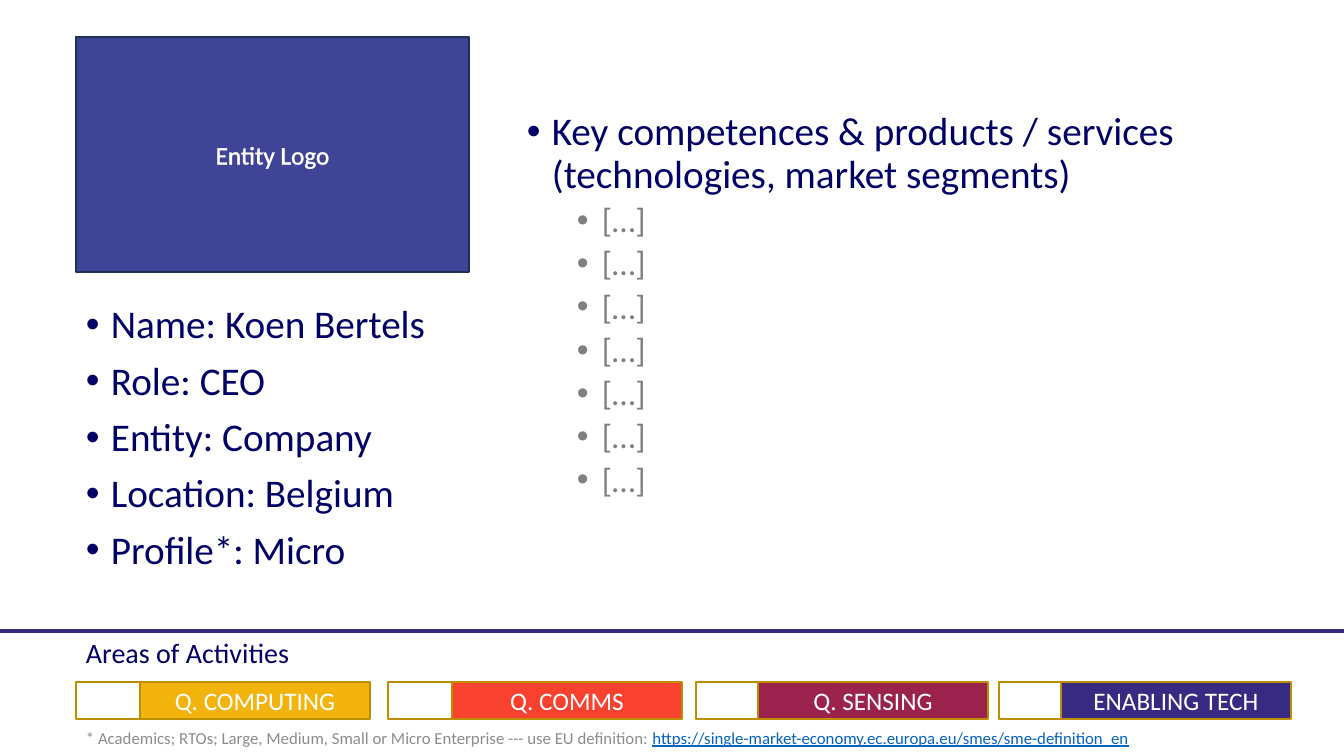
from lxml.etree import SubElement
from pptx import Presentation
from pptx.dml.color import RGBColor
from pptx.enum.shapes import MSO_CONNECTOR, MSO_SHAPE
from pptx.enum.text import MSO_ANCHOR, MSO_AUTO_SIZE, PP_ALIGN
from pptx.oxml.ns import qn
from pptx.util import Pt

NAVY = RGBColor(0x00, 0x00, 0x66)
GREY = RGBColor(0x80, 0x80, 0x80)
NOTE_GREY = RGBColor(0x8C, 0x8C, 0x8C)
LINK_BLUE = RGBColor(0x05, 0x63, 0xC1)
WHITE = RGBColor(0xFF, 0xFF, 0xFF)
LOGO_BLUE = RGBColor(0x40, 0x44, 0x96)
LOGO_EDGE = RGBColor(0x1E, 0x32, 0x56)
GOLD = RGBColor(0xBD, 0x8E, 0x00)
YELLOW = RGBColor(0xF2, 0xB3, 0x0C)
RED = RGBColor(0xF8, 0x41, 0x2E)
BERRY = RGBColor(0x9C, 0x22, 0x4E)
VIOLET = RGBColor(0x38, 0x2A, 0x82)

# Content
PROFILE = ["Name: Koen Bertels", "Role: CEO", "Entity: Company",
           "Location: Belgium", "Profile*: Micro"]
COMPETENCES = "Key competences & products / services (technologies, market segments)"
DETAILS = ["[…]"] * 7
AREAS = [  # label, fill, left of tick box, left of label
    ("Q. COMPUTING", YELLOW, 76, 140),
    ("Q. COMMS", RED, 388, 452),
    ("Q. SENSING", BERRY, 696, 758),
    ("ENABLING TECH", VIOLET, 999, 1061),
]
NOTE = "* Academics; RTOs; Large, Medium, Small or Micro Enterprise --- use EU definition: "
LINK = "https://single-market-economy.ec.europa.eu/smes/sme-definition_en"

# Formats
TOP = dict(size=Pt(28), color=NAVY)
SUB = dict(size=Pt(24), color=GREY)
LABEL = dict(size=Pt(18), color=WHITE)
HEADING = dict(size=Pt(20), color=NAVY)
NOTE_TEXT = dict(size=Pt(12), color=NOTE_GREY)
LINK_TEXT = dict(size=Pt(12), color=LINK_BLUE, underline=True)

# Layout in px
WIDTH, HEIGHT = 1344, 756
LEFT, INDENT = 76, 25
RULE_Y = 631
AREA_TOP, AREA_HEIGHT, LABEL_WIDTH = 682, 37, 230


def px(value):
    return round(value * 914400 / 100.8)


deck = Presentation()
deck.slide_width, deck.slide_height = px(WIDTH), px(HEIGHT)
page = deck.slides.add_slide(deck.slide_layouts[6])


def add_span(para, text, style):
    span = para.add_run()
    span.text = text
    span.font.name = "Calibri"
    for name, value in style.items():
        if name == "color":
            span.font.color.rgb = value
        else:
            setattr(span.font, name, value)
    return span


def add_box(*place):
    frame = page.shapes.add_textbox(*map(px, place)).text_frame
    frame.word_wrap = True
    return frame


def add_bullets(frame, items):
    for number, (level, text) in enumerate(items):
        para = frame.add_paragraph() if number else frame.paragraphs[0]
        para.level = level
        para.line_spacing = 0.9
        if number:
            para.space_before = Pt(5 if level else 10)
        props = para._p.get_or_add_pPr()
        props.set("marL", str(px(INDENT * (1 + 2 * level))))
        props.set("indent", str(px(-INDENT)))
        SubElement(props, qn("a:buFont"), typeface="Arial")
        SubElement(props, qn("a:buChar"), char="•")
        add_span(para, text, SUB if level else TOP)


def add_rectangle(place, fill, edge, text=None):
    box = page.shapes.add_shape(MSO_SHAPE.RECTANGLE, *map(px, place))
    box.shadow.inherit = False
    if fill is None:
        box.fill.background()
    else:
        box.fill.solid()
        box.fill.fore_color.rgb = fill
    box.line.color.rgb = edge
    box.line.width = Pt(1)
    if text is None:
        return None
    box.text_frame.vertical_anchor = MSO_ANCHOR.MIDDLE
    para = box.text_frame.paragraphs[0]
    para.alignment = PP_ALIGN.CENTER
    return add_span(para, text, LABEL)


# Footnote
note = add_box(LEFT, 719, 1216, 37)
note.vertical_anchor = MSO_ANCHOR.MIDDLE
add_span(note.paragraphs[0], NOTE, NOTE_TEXT)
add_span(note.paragraphs[0], LINK, LINK_TEXT)

# Profile and competences
add_bullets(add_box(LEFT, 300, 441, 323), [(0, text) for text in PROFILE])
add_bullets(add_box(517, 107, 774, 539),
            [(0, COMPETENCES)] + [(1, text) for text in DETAILS])

# Logo panel, its text outlined in white
logo = add_rectangle((LEFT, 37, 393, 235), LOGO_BLUE, LOGO_EDGE, "Entity Logo")
props = logo._r.get_or_add_rPr()
outline = SubElement(props, qn("a:ln"), w=str(Pt(0.75)))
SubElement(SubElement(outline, qn("a:solidFill")), qn("a:srgbClr"), val=str(WHITE))
props.insert(0, outline)

# Areas of activity: tick box and label
for label, fill, box_left, label_left in AREAS:
    add_rectangle((label_left, AREA_TOP, LABEL_WIDTH, AREA_HEIGHT), fill, GOLD, label)
    add_rectangle((box_left, AREA_TOP, label_left - box_left, AREA_HEIGHT), None, GOLD)

# Dividing rule and heading
rule = page.shapes.add_connector(MSO_CONNECTOR.STRAIGHT, 0, px(RULE_Y), px(WIDTH), px(RULE_Y))
rule.line.color.rgb = VIOLET
rule.line.width = Pt(3)
SubElement(rule._element.spPr, qn("a:effectLst"))
heading = add_box(LEFT, RULE_Y, 230, 44)
heading.auto_size = MSO_AUTO_SIZE.SHAPE_TO_FIT_TEXT
add_span(heading.paragraphs[0], "Areas of Activities", HEADING)

deck.save("out.pptx")
